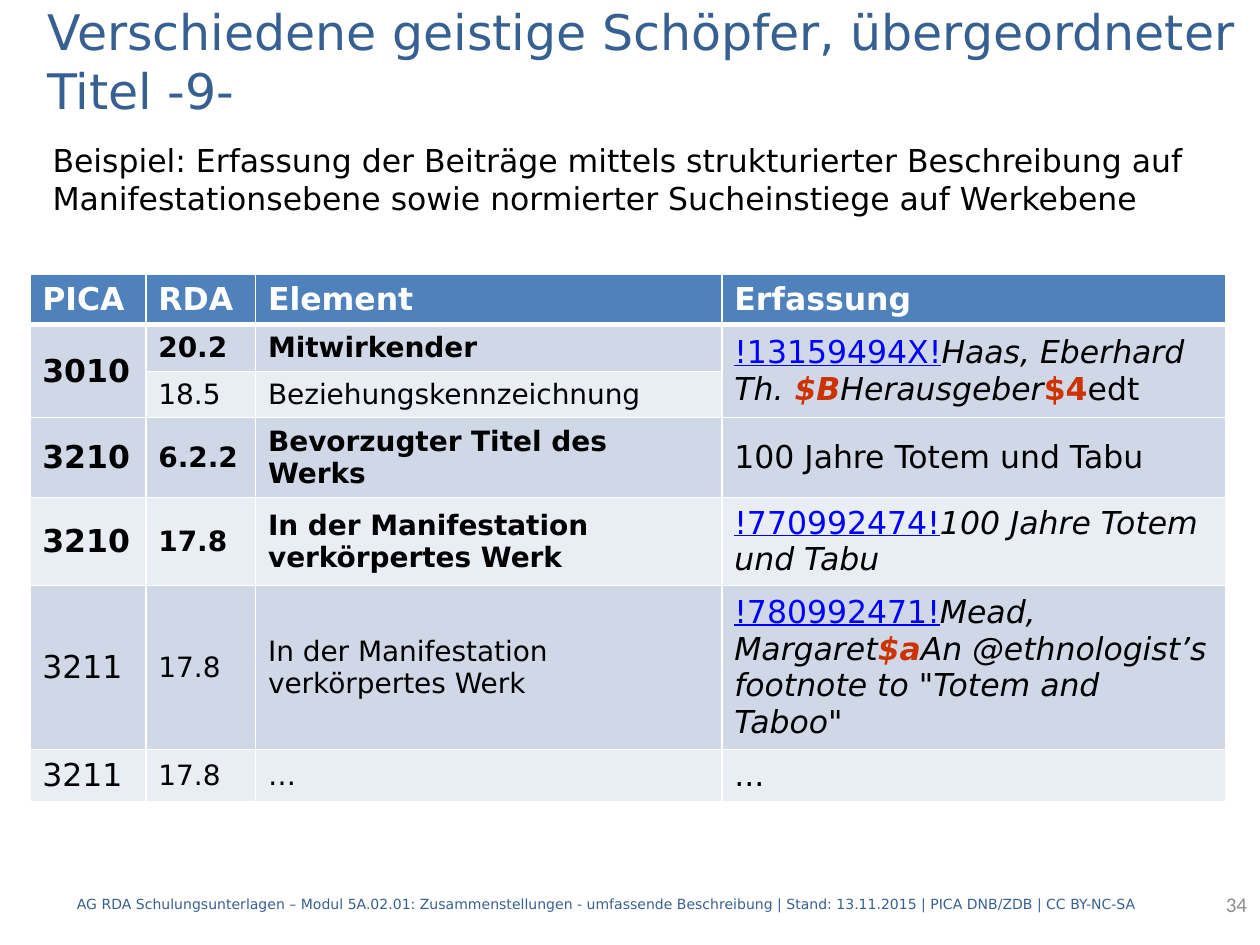
from lxml import etree
from pptx import Presentation
from pptx import util as u
from pptx.dml.color import RGBColor
from pptx.enum import shapes, text
from pptx.oxml import ns

theme = {
    "face": "DejaVu Sans", "number_face": "Calibri",
    "blue": "376092", "header": "4F81BD", "bands": ("D0D8E8", "E9EDF4"),
    "white": "FFFFFF", "black": "000000", "grey": "8C8C8C",
    "link": "0000FF", "code": "CC3300",
    "title": 28, "large": 18, "medium": 16, "number": 12, "small": 8,
}
styles = {
    "plain": {},
    "bold": {"bold": True},
    "italic": {"italic": True},
    "link": {"underline": True, "color": "link"},
    "code": {"bold": True, "color": "code"},
    "italic code": {"bold": True, "italic": True, "color": "code"},
}


def write(paragraph, wording, size, color="black", style="plain", face="face"):
    look = {"color": color, **styles[style]}
    run = paragraph.add_run()
    run.text = wording
    run.font.color.rgb = RGBColor.from_string(theme[look.pop("color")])
    for name, value in {"name": theme[face], "size": u.Pt(theme[size]), **look}.items():
        setattr(run.font, name, value)


def draw_border(cell, position, side, points):
    line = etree.Element(ns.qn(f"a:ln{side}"), w=str(u.Pt(points)))
    fill = etree.SubElement(line, ns.qn("a:solidFill"))
    etree.SubElement(fill, ns.qn("a:srgbClr"), val=theme["white"])
    cell._tc.get_or_add_tcPr().insert(position, line)


deck = Presentation()
deck.slide_width, deck.slide_height = u.Cm(25.4), u.Cm(19.05)
slide = deck.slides.add_slide(deck.slide_layouts[6])

middle, top = text.MSO_ANCHOR.MIDDLE, text.MSO_ANCHOR.TOP
left, right = text.PP_ALIGN.LEFT, text.PP_ALIGN.RIGHT

example = slide.shapes.add_shape(
    shapes.MSO_SHAPE.RECTANGLE, *map(u.Cm, (0.81, 2.72, 23.5, 1.8)))
example.shadow.inherit = False
example.fill.solid()
example.fill.fore_color.rgb = RGBColor.from_string(theme["white"])
example.line.fill.background()

title, footer, number = [
    slide.shapes.add_textbox(*map(u.Cm, place))
    for place in [(0.71, 0.51, 24.68, 1.42), (1.3, 17.71, 23.19, 1.02), (20.09, 17.71, 5.3, 1.02)]]

passages = [
    (title, middle, left, "title", "blue", "face",
     "Verschiedene geistige Schöpfer, übergeordneter Titel -9-"),
    (example, top, left, "large", "black", "face",
     "Beispiel: Erfassung der Beiträge mittels strukturierter Beschreibung auf "
     "Manifestationsebene sowie normierter Sucheinstiege auf Werkebene"),
    (footer, middle, left, "small", "blue", "face",
     "AG RDA Schulungsunterlagen – Modul 5A.02.01: Zusammenstellungen - umfassende "
     "Beschreibung | Stand: 13.11.2015 | PICA DNB/ZDB | CC BY-NC-SA"),
    (number, middle, right, "number", "grey", "number_face", "34"),
]
for passage, anchor, alignment, size, color, face, wording in passages:
    for name, value in {"word_wrap": True, "vertical_anchor": anchor}.items():
        setattr(passage.text_frame, name, value)
    paragraph = passage.text_frame.paragraphs[0]
    paragraph.alignment = alignment
    write(paragraph, wording, size, color, face=face)

headings = ["PICA", "RDA", "Element", "Erfassung"]
entries = [
    ("bold", "3010", "20.2", "Mitwirkender", [
        ("!13159494X!", "link"), ("Haas, Eberhard Th.", "italic"), (" $B", "italic code"),
        ("Herausgeber", "italic"), ("$4", "code"), ("edt", "plain")]),
    ("plain", "", "18.5", "Beziehungskennzeichnung", []),
    ("bold", "3210", "6.2.2", "Bevorzugter Titel des Werks", [
        ("100 Jahre Totem und Tabu", "plain")]),
    ("bold", "3210", "17.8", "In der Manifestation verkörpertes Werk", [
        ("!770992474!", "link"), ("100 Jahre Totem und Tabu", "italic")]),
    ("plain", "3211", "17.8", "In der Manifestation verkörpertes Werk", [
        ("!780992471!", "link"), ("Mead, Margaret", "italic"), ("$a", "italic code"),
        ("An @ethnologist’s footnote to \"Totem and Taboo\"", "italic")]),
    ("plain", "3211", "17.8", "…", [("...", "plain")]),
]
widths = [2.34, 2.21, 9.4, 10.16]
heights = [0.99, 0.94, 0.93, 1.6, 1.78, 3.3, 1.06]

catalogue = slide.shapes.add_table(
    len(heights), len(widths), u.Cm(0.6), u.Cm(5.53),
    u.Cm(sum(widths)), u.Cm(sum(heights))).table
for column, width in zip(catalogue.columns, widths):
    column.width = u.Cm(width)
for row, height in zip(catalogue.rows, heights):
    row.height = u.Cm(height)
for merged in (0, 3):
    catalogue.cell(1, merged).merge(catalogue.cell(2, merged))

for row_index in range(len(heights)):
    for column_index in range(len(widths)):
        cell = catalogue.cell(row_index, column_index)
        band = theme["bands"][(row_index - 1) % 2]
        cell.fill.solid()
        cell.fill.fore_color.rgb = RGBColor.from_string(band if row_index else theme["header"])
        cell.vertical_anchor = middle
        weights = {"L": 1, "R": 1, "T": 3 if row_index == 1 else 1, "B": 1 if row_index else 3}
        for position, (side, points) in enumerate(weights.items()):
            draw_border(cell, position, side, points)

for column_index, heading in enumerate(headings):
    write(catalogue.cell(0, column_index).text_frame.paragraphs[0],
          heading, "large", "white", "bold")

for row_index, (weight, pica, rda, element, recording) in enumerate(entries, 1):
    contents = [[(pica, weight)], [(rda, weight)], [(element, weight)], recording]
    for column_index, (runs, size) in enumerate(
            zip(contents, ["large", "medium", "medium", "large"])):
        cell = catalogue.cell(row_index, column_index)
        if cell.is_spanned:
            continue
        paragraph = cell.text_frame.paragraphs[0]
        for name in ("space_before", "space_after"):
            setattr(paragraph, name, u.Pt(6))
        for wording, style in runs:
            write(paragraph, wording, size, style=style)

deck.save("out.pptx")
